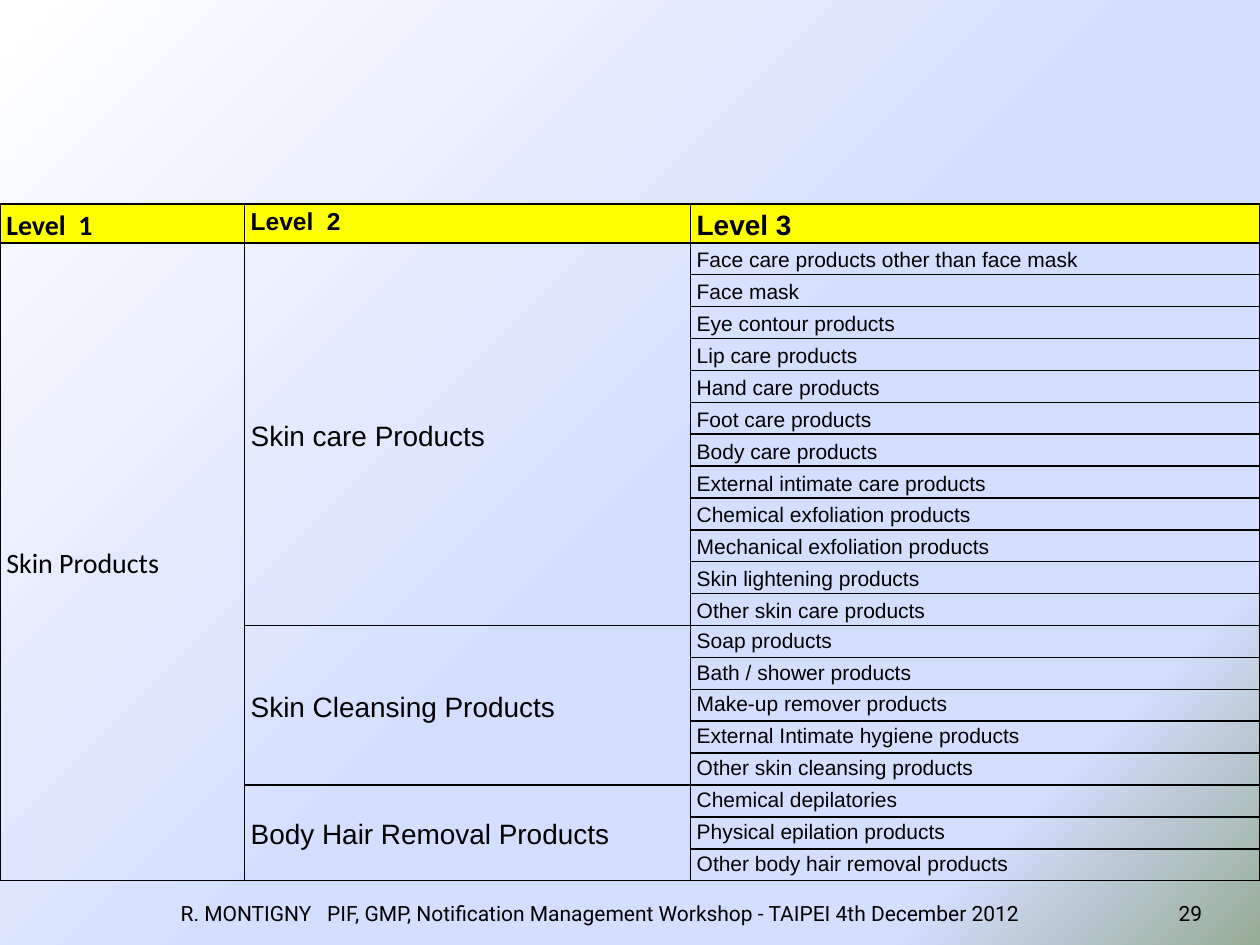
from lxml.etree import SubElement
from pptx import Presentation
from pptx.dml.color import RGBColor
from pptx.enum.text import MSO_ANCHOR, PP_ALIGN
from pptx.oxml.ns import qn
from pptx.util import Inches, Pt

BLACK = RGBColor(0x00, 0x00, 0x00)
YELLOW = RGBColor(0xFF, 0xFF, 0x00)
BACKGROUND_STOPS = [(0, "FFFFFF"), (53, "D4DEFF"), (83, "D4DEFF"), (100, "96AB94")]
BACKGROUND_ANGLE = 45

# text, font, size, anchor
HEADERS = [
    ("Level  1", "Calibri", 16, MSO_ANCHOR.TOP),
    ("Level  2", "Arial", 14, MSO_ANCHOR.TOP),
    ("Level 3", "Arial", 16, MSO_ANCHOR.MIDDLE),
]
LEVEL_1 = "Skin Products"
# level 2, anchor of its level 3 cells, level 3
GROUPS = [
    ("Skin care Products", MSO_ANCHOR.MIDDLE, [
        "Face care products other than face mask",
        "Face mask",
        "Eye contour products",
        "Lip care products",
        "Hand care products",
        "Foot care products",
        "Body care products",
        "External intimate care products",
        "Chemical exfoliation products",
        "Mechanical exfoliation products",
        "Skin lightening products",
        "Other skin care products",
    ]),
    ("Skin Cleansing Products", MSO_ANCHOR.TOP, [
        "Soap products",
        "Bath / shower products",
        "Make-up remover products",
        "External Intimate hygiene products",
        "Other skin cleansing products",
    ]),
    ("Body Hair Removal Products", MSO_ANCHOR.TOP, [
        "Chemical depilatories",
        "Physical epilation products",
        "Other body hair removal products",
    ]),
]
# text, left, width, alignment
FOOTERS = [
    ("R. MONTIGNY   PIF, GMP, Notification Management Workshop - TAIPEI 4th December 2012",
     0.59, 8.35, PP_ALIGN.CENTER),
    ("29", 9.09, 0.55, PP_ALIGN.RIGHT),
]
COLUMN_WIDTHS = [1.94, 3.54, 4.52]
TABLE_TOP, TABLE_HEIGHT, HEADER_HEIGHT = 1.62, 5.37, 0.3


def set_background(slide):
    fill = slide.background.fill
    fill.gradient()
    gradient = slide.background._cSld.find(".//" + qn("a:gradFill"))
    stops = gradient.find(qn("a:gsLst"))
    for stop in list(stops):
        stops.remove(stop)
    for position, color in BACKGROUND_STOPS:
        stop = SubElement(stops, qn("a:gs"), pos=str(position * 1000))
        SubElement(stop, qn("a:srgbClr"), val=color)
    gradient.find(qn("a:lin")).set("ang", str(BACKGROUND_ANGLE * 60000))


def format_text(paragraph, font_name, size, bold=False):
    font = paragraph.runs[0].font
    font.name, font.size, font.bold = font_name, Pt(size), bold
    font.color.rgb = BLACK


def add_borders(cell):
    properties = cell._tc.get_or_add_tcPr()
    for side in ("lnL", "lnR", "lnT", "lnB"):
        line = SubElement(properties, qn("a:" + side), w=str(Pt(1)))
        SubElement(SubElement(line, qn("a:solidFill")), qn("a:srgbClr"), val=str(BLACK))


def write_cell(cell, text, font_name, size, anchor, bold=False):
    cell.vertical_anchor = anchor
    paragraph = cell.text_frame.paragraphs[0]
    paragraph.text = text
    paragraph.line_spacing = 1.15
    format_text(paragraph, font_name, size, bold)


def add_category_table(slide):
    item_count = sum(len(items) for _, _, items in GROUPS)
    table = slide.shapes.add_table(
        item_count + 1, len(COLUMN_WIDTHS), 0, Inches(TABLE_TOP),
        Inches(sum(COLUMN_WIDTHS)), Inches(TABLE_HEIGHT)).table
    table.first_row = table.horz_banding = False
    for column, width in zip(table.columns, COLUMN_WIDTHS):
        column.width = Inches(width)
    for index, row in enumerate(table.rows):
        row.height = Inches((TABLE_HEIGHT - HEADER_HEIGHT) / item_count if index else HEADER_HEIGHT)
        for cell in row.cells:
            cell.margin_left = cell.margin_right = Inches(0.05)
            cell.margin_top = cell.margin_bottom = 0
            add_borders(cell)
            if index:
                cell.fill.background()
            else:
                cell.fill.solid()
                cell.fill.fore_color.rgb = YELLOW

    for column, header in enumerate(HEADERS):
        write_cell(table.cell(0, column), *header, bold=True)
    table.cell(1, 0).merge(table.cell(item_count, 0))
    write_cell(table.cell(1, 0), LEVEL_1, "Calibri", 16, MSO_ANCHOR.MIDDLE)
    first = 1
    for level_2, anchor, items in GROUPS:
        table.cell(first, 1).merge(table.cell(first + len(items) - 1, 1))
        write_cell(table.cell(first, 1), level_2, "Arial", 16, MSO_ANCHOR.MIDDLE)
        for row, item in enumerate(items, first):
            write_cell(table.cell(row, 2), item, "Arial", 12, anchor)
        first += len(items)


def add_footer(slide, text, left, width, alignment):
    box = slide.shapes.add_textbox(Inches(left), Inches(7.05), Inches(width), Inches(0.4))
    frame = box.text_frame
    frame.word_wrap = True
    frame.vertical_anchor = MSO_ANCHOR.MIDDLE
    frame.text = text
    frame.paragraphs[0].alignment = alignment
    format_text(frame.paragraphs[0], "Roboto", 12)


def main():
    presentation = Presentation()
    presentation.slide_width, presentation.slide_height = Inches(10), Inches(7.5)
    slide = presentation.slides.add_slide(presentation.slide_layouts[6])
    set_background(slide)
    for footer in FOOTERS:
        add_footer(slide, *footer)
    add_category_table(slide)
    presentation.save("out.pptx")


if __name__ == "__main__":
    main()
